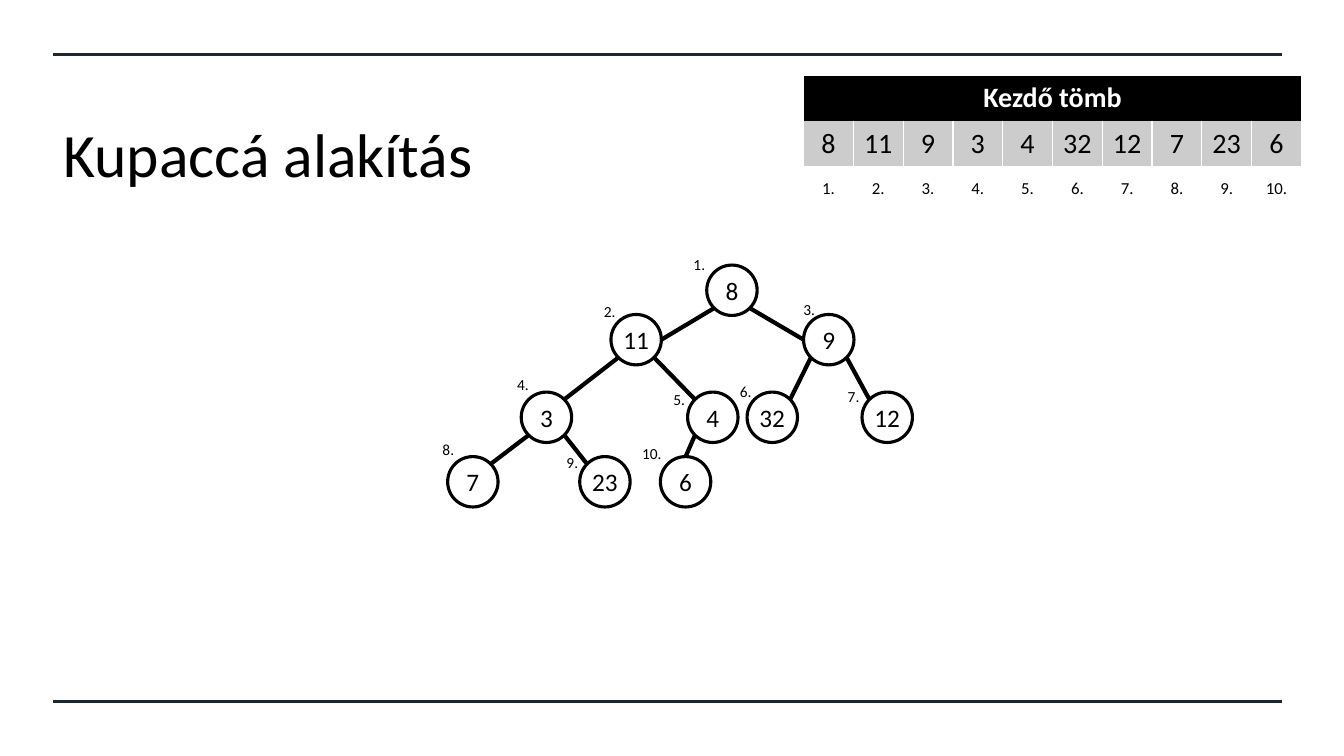
from dataclasses import dataclass
from math import cos, radians, sin

from lxml.etree import SubElement
from pptx import Presentation
from pptx.dml.color import RGBColor
from pptx.enum.shapes import MSO_CONNECTOR, MSO_SHAPE
from pptx.enum.text import MSO_ANCHOR, PP_ALIGN
from pptx.oxml import parse_xml
from pptx.oxml.ns import nsdecls, qn
from pptx.util import Inches, Pt


@dataclass(frozen=True)
class Theme:
    font: str = "Calibri"
    ink: str = "000000"
    paper: str = "FFFFFF"
    rule: str = "1C2831"
    cell: str = "CCCCCC"
    title_size: int = 44
    array_size: int = 20
    index_size: int = 12
    node_size: int = 18
    label_size: int = 11
    outline: float = 2.25
    edge: float = 3


@dataclass(frozen=True)
class Box:
    left: float
    top: float
    width: float
    height: float

    def inches(self):
        return [Inches(length) for length in (self.left, self.top, self.width, self.height)]


@dataclass(frozen=True)
class Node:
    """Centre and label corner in tree grid units; the label is relative to the centre."""
    value: int
    column: float
    row: float
    label_column: float
    label_row: float


THEME = Theme()
SLIDE_WIDTH, SLIDE_HEIGHT = 13.33, 7.5
TREE_COLUMNS, TREE_ROWS = 46, 24
RADIUS = 2.5
LEVELS = (2.5, 7.4, 15.1, 21.5)

HEAP = [
    Node(8, 28.2, LEVELS[0], -4.8, -4.0),
    Node(11, 18.7, LEVELS[1], -4.2, -4.2),
    Node(9, 37.8, LEVELS[1], -3.5, -4.4),
    Node(3, 9.8, LEVELS[2], -3.9, -4.7),
    Node(4, 26.3, LEVELS[2], -4.9, -3.2),
    Node(32, 32.2, LEVELS[2], -4.2, -4.0),
    Node(12, 43.6, LEVELS[2], -4.9, -3.5),
    Node(7, 2.5, LEVELS[3], -4.0, -4.6),
    Node(23, 15.6, LEVELS[3], -4.8, -3.3),
    Node(6, 23.6, LEVELS[3], -5.3, -4.2),
]
# Angles on the circle, clockwise from the right, where an edge reaches its child
SPECIAL_ARRIVALS = {2: 0, 3: 180, 10: 270}


def color(value):
    return RGBColor.from_string(value)


def write(text_frame, text, size, ink=THEME.ink, bold=False, align=PP_ALIGN.LEFT):
    text_frame.text = text
    paragraph = text_frame.paragraphs[0]
    paragraph.alignment = align
    font = paragraph.runs[0].font
    font.name, font.size, font.bold = THEME.font, Pt(size), bold
    font.color.rgb = color(ink)


def add_text(slide, box, text, size, anchor=MSO_ANCHOR.TOP):
    text_frame = slide.shapes.add_textbox(*box.inches()).text_frame
    text_frame.word_wrap = True
    text_frame.vertical_anchor = anchor
    write(text_frame, text, size)


def add_line(slide, start, end, ink, width):
    line = slide.shapes.add_connector(
        MSO_CONNECTOR.STRAIGHT, *[Inches(length) for length in (*start, *end)])
    line.line.color.rgb = color(ink)
    line.line.width = Pt(width)
    SubElement(line._element.spPr, qn("a:effectLst"))


def add_frame(slide, box):
    """Rules along the top and bottom of the box."""
    for y in (box.top, box.top + box.height):
        add_line(slide, (box.left, y), (box.left + box.width, y), THEME.rule, THEME.outline)


def set_borders(cell, sides):
    """Draws white borders on the given sides and clears the others."""
    properties = cell._tc.get_or_add_tcPr()
    for position, side in enumerate("LRTB"):
        fill = (f'<a:solidFill><a:srgbClr val="{THEME.paper}"/></a:solidFill>'
                if side in sides else "<a:noFill/>")
        properties.insert(position, parse_xml(
            f'<a:ln{side} {nsdecls("a")} w="{Pt(1)}">{fill}</a:ln{side}>'))


def add_array(slide, box, heading, values):
    count = len(values)
    table = slide.shapes.add_table(3, count, *box.inches()).table
    table.first_row = table.horz_banding = False
    for column in table.columns:
        column.width = Inches(box.width / count)
    rows = [
        ([heading], THEME.array_size, THEME.paper, THEME.ink, "LRT"),
        ([str(value) for value in values], THEME.array_size, THEME.ink, THEME.cell, "LR"),
        ([f"{index}." for index in range(1, count + 1)], THEME.index_size, THEME.ink, None, ""),
    ]
    table.cell(0, 0).merge(table.cell(0, count - 1))
    for row, (texts, size, ink, fill, sides) in enumerate(rows):
        table.rows[row].height = Inches(box.height / len(rows))
        for column, text in enumerate(texts):
            cell = table.cell(row, column)
            cell.margin_left = cell.margin_right = Inches(0.03)
            cell.vertical_anchor = MSO_ANCHOR.MIDDLE
            write(cell.text_frame, text, size, ink, bold=row == 0, align=PP_ALIGN.CENTER)
            if fill:
                cell.fill.solid()
                cell.fill.fore_color.rgb = color(fill)
            else:
                cell.fill.background()
            set_borders(cell, sides)


def add_tree(slide, box, nodes):
    column_width, row_height = box.width / TREE_COLUMNS, box.height / TREE_ROWS

    def place(column, row):
        return box.left + column * column_width, box.top + row * row_height

    def rim(node, angle):
        return place(node.column + RADIUS * cos(radians(angle)),
                     node.row + RADIUS * sin(radians(angle)))

    for node in nodes:
        corner = place(node.column - RADIUS, node.row - RADIUS)
        circle_box = Box(*corner, 2 * RADIUS * column_width, 2 * RADIUS * row_height)
        circle = slide.shapes.add_shape(MSO_SHAPE.OVAL, *circle_box.inches())
        circle.shadow.inherit = False
        circle.fill.background()
        circle.line.color.rgb = color(THEME.ink)
        circle.line.width = Pt(THEME.outline)
        text_frame = circle.text_frame
        text_frame.margin_left = text_frame.margin_right = 0
        text_frame.margin_top = text_frame.margin_bottom = 0
        text_frame.word_wrap = False
        text_frame.vertical_anchor = MSO_ANCHOR.MIDDLE
        write(text_frame, str(node.value), THEME.node_size, align=PP_ALIGN.CENTER)

    for index, child in enumerate(nodes[1:], start=2):
        parent = nodes[index // 2 - 1]
        is_left = index % 2 == 0
        departure = 135 if is_left else 45
        arrival = SPECIAL_ARRIVALS.get(index, 315 if is_left else 225)
        add_line(slide, rim(parent, departure), rim(child, arrival), THEME.ink, THEME.edge)

    for index, node in enumerate(nodes, start=1):
        corner = place(node.column + node.label_column, node.row + node.label_row)
        label_width = 3.7 if index < 10 else 4.3
        label_box = Box(*corner, label_width * column_width, 2.9 * row_height)
        add_text(slide, label_box, f"{index}.", THEME.label_size)


def main():
    presentation = Presentation()
    presentation.slide_width = Inches(SLIDE_WIDTH)
    presentation.slide_height = Inches(SLIDE_HEIGHT)
    slide = presentation.slides.add_slide(presentation.slide_layouts[6])
    add_frame(slide, Box(0.53, 0.54, 12.19, 6.42))
    add_text(slide, Box(0.53, 1.07, 11.63, 0.9), "Kupaccá alakítás",
             THEME.title_size, MSO_ANCHOR.MIDDLE)
    add_array(slide, Box(7.97, 0.75, 4.94, 1.35), "Kezdő tömb", [node.value for node in HEAP])
    add_tree(slide, Box(4.44, 2.63, 4.6, 2.4), HEAP)
    presentation.save("out.pptx")


if __name__ == "__main__":
    main()
